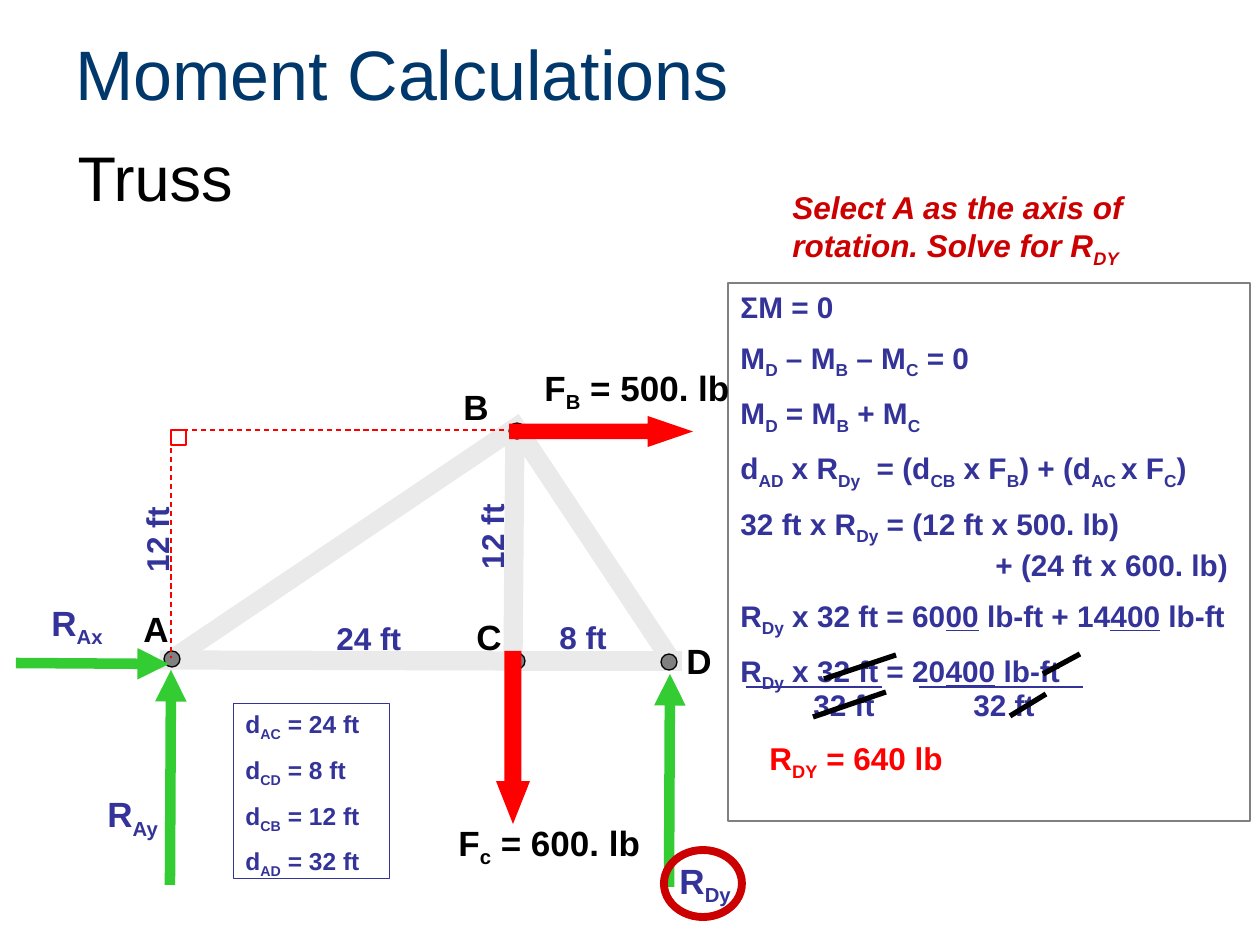
from lxml import etree
from pptx import Presentation
from pptx.dml.color import RGBColor
from pptx.enum import dml, shapes, text
from pptx.oxml import ns
from pptx.util import Pt

PX = 914400 / 126
FONT = "Arial"
BLACK = RGBColor(0, 0, 0)
NAVY = RGBColor(0x00, 0x38, 0x6B)
INDIGO = RGBColor(0x33, 0x33, 0x99)
RED = RGBColor(0xFF, 0, 0)
DARK_RED = RGBColor(0xCC, 0, 0)
GREEN = RGBColor(0x33, 0xCC, 0x33)
GRAY = RGBColor(0x80, 0x80, 0x80)
PALE_GRAY = RGBColor(0xEA, 0xEA, 0xEA)

# In all texts ~ switches subscript on and off, _ switches underline.
MEMBERS = [(519, 431, 673, 663), (165, 664, 524, 422), (515, 426, 513, 663),
           (518, 661, 682, 661), (160, 660, 523, 661)]
JOINTS = [(661, 654), (164, 651), (509, 423), (509, 653)]
GUIDES = [(504, 430, 171, 430), (171, 430, 171, 658)]
REACTIONS = [(170, 885, 171, 670), (669, 887, 670, 674), (16, 663, 169, 664)]
FRACTION_BARS = [(746, 687, 882, 687), (919, 687, 1083, 687)]
STRIKES = [(896, 655, 824, 679), (1046, 694, 1010, 716),
           (1080, 654, 1043, 674), (886, 692, 813, 717)]
LABELS = [  # text, left, top, width, size, colour
    ("A", 131, 601, 69, 20, BLACK),
    ("B", 451, 379, 53, 20, BLACK),
    ("C", 464, 609, 54, 20, BLACK),
    ("D", 674, 633, 49, 20, BLACK),
    ("F~c~ = 600. lb", 446, 815, 228, 20, BLACK),
    ("F~B~ = 500. lb", 532, 360, 228, 20, BLACK),
    ("R~Ay~", 95, 786, 93, 20, INDIGO),
    ("R~Ax~", 39, 595, 93, 20, INDIGO),
    ("R~Dy~", 667, 853, 93, 20, INDIGO),
    ("32 ft", 801, 681, 100, 17, INDIGO),
    ("32 ft", 961, 681, 100, 17, INDIGO),
    ("R~DY~ = 640 lb", 757, 733, 450, 18, RED),
]
DIMENSIONS = [  # text, left, top, width, rotation
    ("24 ft", 324, 613, 91, 0),
    ("8 ft", 547, 612, 73, 0),
    ("12 ft", 446, 511, 91, 270),
    ("12 ft", 111, 514, 91, 270),
]
DISTANCES = ["d~AC~ = 24 ft", "d~CD~ = 8 ft", "d~CB~ = 12 ft", "d~AD~ = 32 ft"]
EQUATIONS = [
    "ΣM = 0",
    "M~D~ – M~B~ – M~C~ = 0",
    "M~D~ = M~B~ + M~C~",
    "d~AD~ x R~Dy~  = (d~CB~ x F~B~) + (d~AC ~x F~C~)",
    "32 ft x R~Dy~ = (12 ft x 500. lb)",
    "+ (24 ft x 600. lb)",
    "R~Dy~ x 32 ft = 60_00_ lb-ft + 14_400_ lb-ft",
    "R~Dy~ x 32 ft = 20_400_ lb-ft",
]
CONTINUATION = 5  # the equation line that continues the one before it


def emu(*lengths):
    return [round(length * PX) for length in lengths]


def add_marked_runs(paragraph, marked):
    for i, sub_part in enumerate(marked.split("~")):
        for j, part in enumerate(sub_part.split("_")):
            if part:
                run = paragraph.add_run()
                run.text = part
                if i % 2:
                    run.font._element.set("baseline", "-25000")
                if j % 2:
                    run.font.underline = True


def write(shape, lines, size, colour, bold=True, italic=False, gap=0):
    frame = shape.text_frame
    frame.word_wrap = True
    frame.auto_size = text.MSO_AUTO_SIZE.NONE
    frame.vertical_anchor = text.MSO_ANCHOR.TOP
    for i, line in enumerate(lines):
        paragraph = frame.add_paragraph() if i else frame.paragraphs[0]
        add_marked_runs(paragraph, line)
        paragraph.alignment = text.PP_ALIGN.LEFT
        paragraph.space_before = Pt(0)
        paragraph.space_after = Pt(gap)
        font = paragraph.font
        font.name, font.size, font.bold, font.italic = FONT, Pt(size), bold, italic
        font.color.rgb = colour
    return frame


def add_label(slide, box, *args, **kwargs):
    label = slide.shapes.add_textbox(*emu(*box))
    write(label, *args, **kwargs)
    return label


def add_line(slide, ends, colour, width, dashed=False, arrow=False):
    connector = slide.shapes.add_connector(shapes.MSO_CONNECTOR.STRAIGHT, *emu(*ends))
    line = connector.line
    line.color.rgb = colour
    line.width = Pt(width)
    if dashed:
        line.dash_style = dml.MSO_LINE.DASH
    if arrow:
        etree.SubElement(line._get_or_add_ln(), ns.qn("a:tailEnd"), type="triangle")
    etree.SubElement(connector._element.spPr, ns.qn("a:effectLst"))


def add_figure(slide, kind, box, fill=None, outline=None, width=0.75):
    shape = slide.shapes.add_shape(kind, *emu(*box))
    shape.shadow.inherit = False
    if fill is None:
        shape.fill.background()
    else:
        shape.fill.solid()
        shape.fill.fore_color.rgb = fill
    if outline is None:
        shape.line.fill.background()
    else:
        shape.line.color.rgb = outline
        shape.line.width = Pt(width)
    return shape


def add_headings(slide):
    title, body = slide.shapes.title, slide.placeholders[1]
    for shape, box in ((title, (63, 23, 1134, 98)), (body, (18, 132, 248, 126))):
        shape.left, shape.top, shape.width, shape.height = emu(*box)
    frame = write(title, ["Moment Calculations"], 40, NAVY, bold=False)
    frame.vertical_anchor = text.MSO_ANCHOR.MIDDLE
    frame = write(body, ["Truss"], 36, BLACK, bold=False)
    properties = frame.paragraphs[0]._p.get_or_add_pPr()
    properties.set("marL", str(emu(47)[0]))
    properties.set("indent", "0")
    properties.insert_element_before(
        properties.makeelement(ns.qn("a:buNone")), "a:tabLst", "a:defRPr", "a:extLst")


def add_truss(slide):
    kinds = shapes.MSO_SHAPE
    for member in MEMBERS:
        add_line(slide, member, PALE_GRAY, 11)
    for left, top in JOINTS:
        add_figure(slide, kinds.OVAL, (left, top, 16, 16), GRAY, BLACK)
    for kind, box, head in ((kinds.DOWN_ARROW, (496, 651, 34, 173), 1.26),
                            (kinds.RIGHT_ARROW, (509, 416, 184, 31), 1.46)):
        arrow = add_figure(slide, kind, box, RED)
        arrow.adjustments[0] = 0.5
        arrow.adjustments[1] = head
    for reaction in REACTIONS:
        add_line(slide, reaction, GREEN, 6, arrow=True)
    for guide in GUIDES:
        add_line(slide, guide, RED, 0.75, dashed=True)
    add_figure(slide, kinds.RECTANGLE, (171, 430, 15, 15), outline=RED)
    for name, left, top, width, rotation in DIMENSIONS:
        label = add_label(slide, (left, top, width, 50), [name], 18, INDIGO)
        label.text_frame.word_wrap = False
        label.rotation = rotation


def add_calculations(slide):
    kinds = shapes.MSO_SHAPE
    distances = add_figure(slide, kinds.RECTANGLE, (233, 703, 156, 176),
                           outline=INDIGO, width=0.5)
    write(distances, DISTANCES, 14, INDIGO, gap=7)
    equations = add_figure(slide, kinds.RECTANGLE, (728, 283, 522, 538), outline=GRAY)
    paragraphs = write(equations, EQUATIONS, 17, INDIGO, gap=8.4).paragraphs
    paragraphs[CONTINUATION - 1].space_after = Pt(0.4)
    paragraphs[CONTINUATION]._p.get_or_add_pPr().set("marL", str(emu(255)[0]))
    add_label(slide, (780, 182, 470, 88),
              ["Select A as the axis of rotation. Solve for R~DY~"],
              18, DARK_RED, italic=True)


def main():
    presentation = Presentation()
    presentation.slide_width, presentation.slide_height = emu(1260, 945)
    slide = presentation.slides.add_slide(presentation.slide_layouts[1])
    add_headings(slide)
    add_truss(slide)
    add_calculations(slide)
    for name, left, top, width, size, colour in LABELS:
        add_label(slide, (left, top, width, 54), [name], size, colour)
    add_figure(slide, shapes.MSO_SHAPE.OVAL, (664, 850, 78, 67),
               outline=DARK_RED, width=4.5)
    for bar in FRACTION_BARS:
        add_line(slide, bar, INDIGO, 0.75)
    for strike in STRIKES:
        add_line(slide, strike, BLACK, 3)
    presentation.save("out.pptx")


if __name__ == "__main__":
    main()
